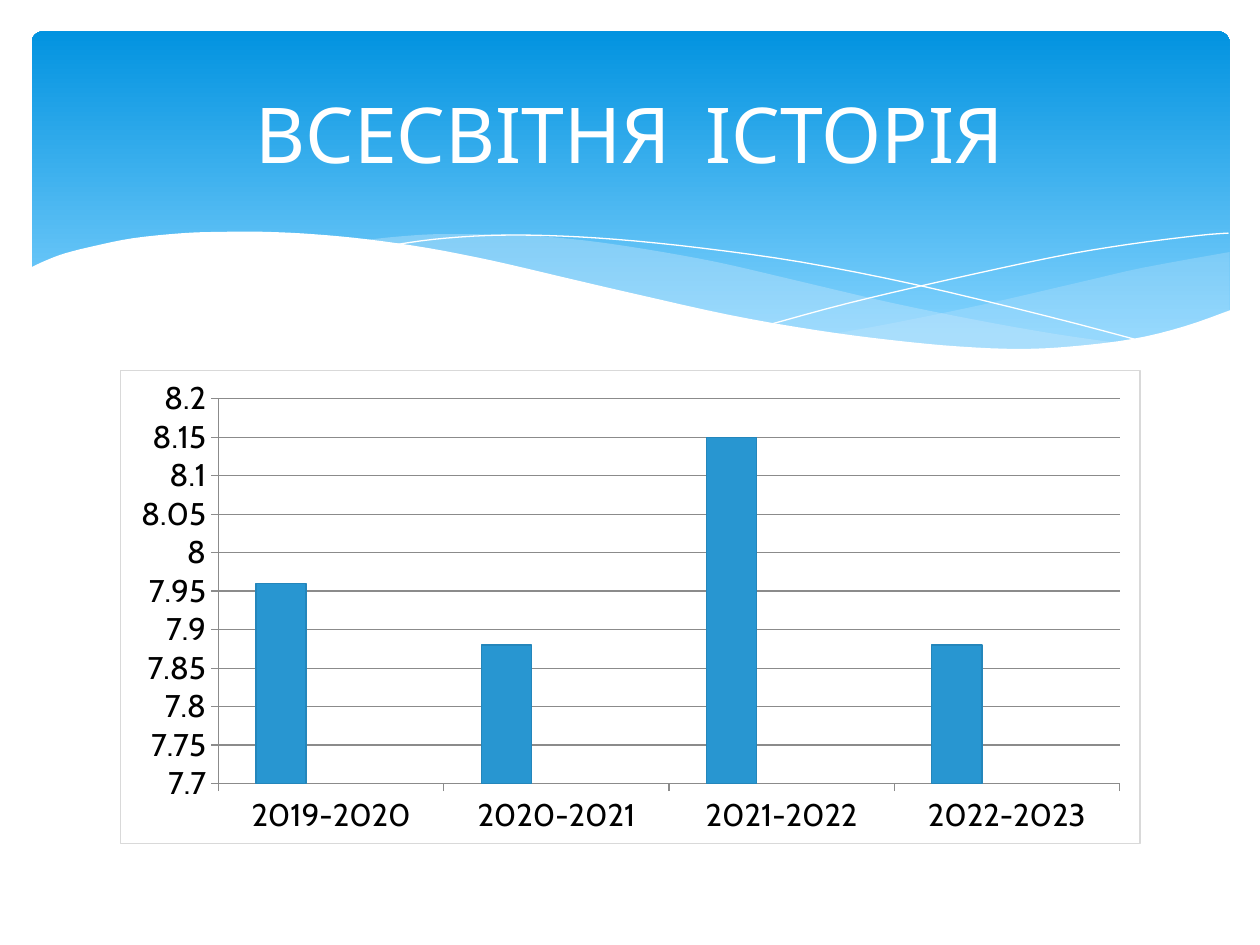
import pptx
import pptx.util
import pptx.chart.data
import pptx.dml.color
import pptx.enum.chart
import pptx.enum.shapes
import pptx.enum.text
import pptx.oxml
import pptx.oxml.ns

Pt = pptx.util.Pt

# Content
TITLE = "ВСЕСВІТНЯ  ІСТОРІЯ"
FONT = "Cabin"
YEARS = ["2019-2020", "2020-2021", "2021-2022", "2022-2023"]
SERIES = [
    ("Series 1", (7.96, 7.88, 8.15, 7.88), "2896D1"),
    ("Series 2", (None,) * 4, "31B6FD"),
    ("Series 3", (None,) * 4, "A4D3FD"),
]

# Waves: knots in points, each list is one smooth curve
HAZE_RIGHT = [
    [(702.7, 144), (653, 153), (620, 160.6), (561, 174.2), (508.3, 185),
     (475.9, 190.8)],
    [(475.9, 190.8), (517.7, 196.6), (553.7, 199.4), (586, 200.2),
     (614.9, 199.4), (645.8, 194.4), (673.2, 187.9), (702.7, 177.8)],
]
HAZE_MID = [
    [(643, 196.6), (602.6, 190.8), (558, 182.9), (508.3, 172.8),
     (452.9, 159.8), (409.7, 149.8), (370, 142.6), (334.8, 137.5),
     (302.4, 134.6), (273.6, 133.9), (247.7, 133.9), (225.4, 135.4),
     (205.9, 137.5)],
    [(205.9, 137.5), (246.2, 143.3), (290.9, 151.9), (323.3, 159.8),
     (381.6, 172.8), (432.7, 183.6), (478.8, 191.5), (520, 197.3),
     (556.6, 199.4), (589, 200.2), (617, 199.4), (643, 196.6)],
]
LINE_DOWN = [
    [(222.5, 140.4), (247.7, 136.8), (278.6, 134.6), (311.8, 134.6),
     (352, 136.8), (401, 141.8), (457.9, 149.8), (523.4, 162.7),
     (598.3, 180.7), (653, 195.1)],
]
LINE_UP = [
    [(441.4, 185), (483.8, 173.5), (538.6, 160.6), (602, 146.9),
     (644.4, 139.7), (684.7, 134.6), (702, 133.2)],
]
FRONT = [
    [(703.4, 177.1), (676.8, 186.5), (647.3, 193.7), (612, 198),
     (582.5, 199.4), (547.9, 198), (509.8, 194.4), (465.8, 188.6),
     (416.9, 180), (362.2, 167.8), (321.8, 158.4), (281.5, 149),
     (244.8, 141.8), (210.2, 136.8), (180, 133.9), (151.9, 132.5),
     (127.4, 132.5), (105.1, 133.2), (76.3, 136.1), (54.7, 140.4),
     (37.4, 144.7), (25.9, 149), (16.6, 153.4)],
    [(16.6, 236.9), (703.4, 236.9)],
]
# curves, fill, opacity in percent; no fill means a white hairline
WAVES = [
    (HAZE_RIGHT, "C6E7FC", 29),
    (HAZE_MID, "C6E7FC", 40),
    (LINE_DOWN, None, 100),
    (LINE_UP, None, 100),
    (FRONT, "FFFFFF", 100),
]


def paint(color, code):
    color.rgb = pptx.dml.color.RGBColor.from_string(code)


def fill(shape, code):
    shape.fill.solid()
    paint(shape.fill.fore_color, code)


def stroke(line, code, width=0.75):
    line.width = Pt(width)
    paint(line.color, code)


def smooth(knots, steps=4):
    """Catmull-Rom curve through the knots."""
    ends = [knots[0]] + knots + [knots[-1]]
    dots = [knots[0]]
    for a, b, c, d in zip(ends, ends[1:], ends[2:], ends[3:]):
        for i in range(1, steps + 1):
            t = i / steps
            dots.append(tuple(
                q + t / 2 * (r - p + t * (2 * p - 5 * q + 4 * r - s
                                          + t * (3 * (q - r) + s - p)))
                for p, q, r, s in zip(a, b, c, d)))
    return dots


def wave(shapes, curves, code, alpha):
    dots = [(Pt(x), Pt(y)) for knots in curves for x, y in smooth(knots)]
    path = shapes.build_freeform(*dots[0])
    path.add_line_segments(dots[1:], close=code is not None)
    shape = path.convert_to_shape()
    shape.shadow.inherit = False
    if code is None:
        shape.fill.background()
        stroke(shape.line, "FFFFFF", 0)
        return
    fill(shape, code)
    shape.line.fill.background()
    if alpha < 100:
        tint = shape.fill._xPr.find(".//" + pptx.oxml.ns.qn("a:srgbClr"))
        node = pptx.oxml.parse_xml(
            f'<a:alpha {pptx.oxml.ns.nsdecls("a")} val="{alpha * 1000}"/>')
        tint.append(node)


def banner(shapes):
    box = shapes.add_shape(pptx.enum.shapes.MSO_SHAPE.ROUNDED_RECTANGLE,
                           Pt(18), Pt(18), Pt(684.7), Pt(194.4))
    box.adjustments[0] = 0.034
    box.shadow.inherit = False
    box.line.fill.background()
    box.fill.gradient()
    box.fill.gradient_angle = 90
    for stop, (place, code) in zip(box.fill.gradient_stops,
                                   [(0.1, "83D3FE"), (1, "0293E0")]):
        stop.position = place
        paint(stop.color, code)


def graph(shapes):
    data = pptx.chart.data.CategoryChartData()
    data.categories = YEARS
    for name, vals, _ in SERIES:
        data.add_series(name, vals)
    chart = shapes.add_chart(
        pptx.enum.chart.XL_CHART_TYPE.COLUMN_CLUSTERED,
        Pt(68.6), Pt(211.2), Pt(583.2), Pt(271.2), data).chart
    chart.has_legend = False
    chart.has_title = False
    chart.font.name = "Arial"
    chart.font.size = Pt(10)

    # Bars
    plot = chart.plots[0]
    plot.gap_width = 150
    plot.overlap = 0
    plot.vary_by_categories = False
    for bars, (_, _, code) in zip(plot.series, SERIES):
        fill(bars.format, code)
        stroke(bars.format.line, "2486BB")

    # Axes
    for axis in (chart.category_axis, chart.value_axis):
        axis.major_tick_mark = pptx.enum.chart.XL_TICK_MARK.OUTSIDE
        axis.minor_tick_mark = pptx.enum.chart.XL_TICK_MARK.NONE
        stroke(axis.format.line, "8B8B8B")
        font = axis.tick_labels.font
        font.name, font.size = FONT, Pt(18)
        paint(font.color, "000000")
    axis = chart.value_axis
    axis.minimum_scale, axis.maximum_scale, axis.major_unit = 7.7, 8.2, 0.05
    axis.tick_labels.number_format = "General"
    axis.tick_labels.number_format_is_linked = False
    axis.has_major_gridlines = True
    stroke(axis.major_gridlines.format.line, "8B8B8B")

    # Frame
    frame = pptx.oxml.parse_xml(
        f'<c:spPr {pptx.oxml.ns.nsdecls("c", "a")}><a:noFill/>'
        f'<a:ln w="{Pt(0.75)}"><a:solidFill><a:srgbClr val="D9D9D9"/>'
        '</a:solidFill></a:ln></c:spPr>')
    chart._chartSpace.find(pptx.oxml.ns.qn("c:chart")).addnext(frame)


def head(shapes):
    title = shapes.title
    title.left, title.top = Pt(36), Pt(26.6)
    title.width, title.height = Pt(648), Pt(98.6)
    title.text_frame.text = TITLE
    title.text_frame.vertical_anchor = pptx.enum.text.MSO_ANCHOR.MIDDLE
    para = title.text_frame.paragraphs[0]
    para.alignment = pptx.enum.text.PP_ALIGN.CENTER
    para.font.name, para.font.size = FONT, Pt(44)
    paint(para.font.color, "FFFFFF")
    shapes._spTree.append(title._element)  # bring to the front


def main():
    deck = pptx.Presentation()
    deck.slide_width, deck.slide_height = Pt(720), Pt(540)
    shapes = deck.slides.add_slide(deck.slide_layouts[5]).shapes
    banner(shapes)
    for item in WAVES:
        wave(shapes, *item)
    graph(shapes)
    head(shapes)
    deck.save("out.pptx")


if __name__ == "__main__":
    main()
